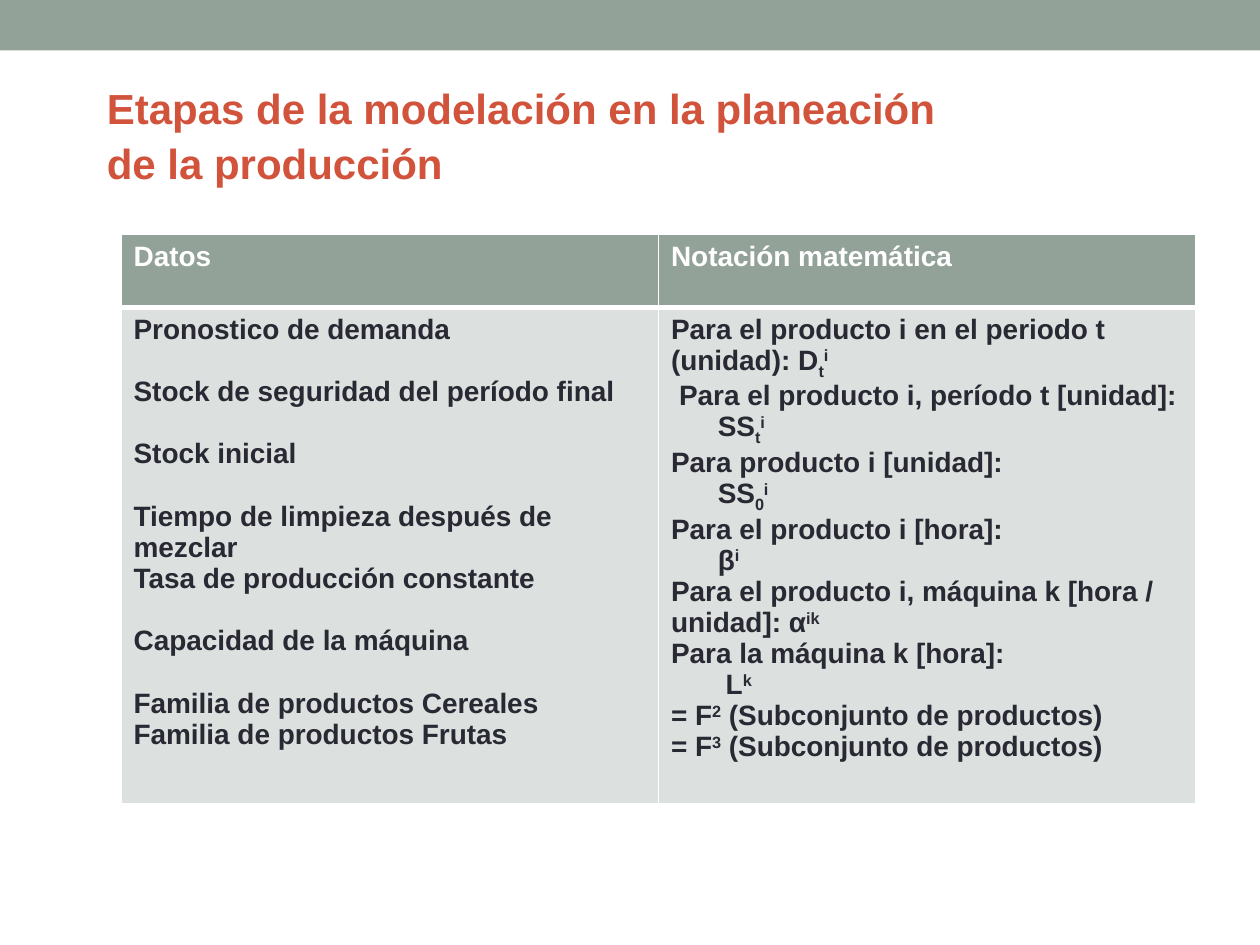
from dataclasses import dataclass

from lxml.etree import SubElement
from pptx import Presentation
from pptx.dml.color import RGBColor
from pptx.enum.shapes import MSO_SHAPE
from pptx.enum.text import MSO_ANCHOR, MSO_AUTO_SIZE, PP_ALIGN
from pptx.oxml.ns import qn
from pptx.util import Cm, Pt


@dataclass(frozen=True)
class Theme:
    font: str = "Arial"
    sage: str = "93A299"
    cell: str = "DCE0DE"
    accent: str = "D2533C"
    ink: str = "292934"
    white: str = "FFFFFF"
    title_size: float = 24
    table_size: float = 16
    line_gap: float = 17.9


THEME = Theme()
SUB, SUPER = -25, 30
NOTATION_INDENT = Cm(0.94)
SPACE_INDENT = Cm(0.16)

TITLE_LINES = ["Etapas de la modelación en la planeación", "de la producción"]
HEADINGS = ["Datos", "Notación matemática"]
# Each entry: text, whether an empty line's height precedes it
DATA = [
    ("Pronostico de demanda", False),
    ("Stock de seguridad del período final", True),
    ("Stock inicial", True),
    ("Tiempo de limpieza después de mezclar", True),
    ("Tasa de producción constante", False),
    ("Capacidad de la máquina", True),
    ("Familia de productos Cereales", True),
    ("Familia de productos Frutas", False),
]
# Each entry: left indent, then (text, baseline shift) runs
NOTATION = [
    (0, [("Para el producto i en el periodo t (unidad): D", 0), ("t", SUB), ("i", SUPER)]),
    (SPACE_INDENT, [("Para el producto i, período t [unidad]:", 0)]),
    (NOTATION_INDENT, [("SS", 0), ("t", SUB), ("i", SUPER)]),
    (0, [("Para producto i [unidad]:", 0)]),
    (NOTATION_INDENT, [("SS", 0), ("0", SUB), ("i", SUPER)]),
    (0, [("Para el producto i [hora]:", 0)]),
    (NOTATION_INDENT, [("β", 0), ("i", SUPER)]),
    (0, [("Para el producto i, máquina k [hora / unidad]: α", 0), ("ik", SUPER)]),
    (0, [("Para la máquina k [hora]:", 0)]),
    (NOTATION_INDENT + SPACE_INDENT, [("L", 0), ("k", SUPER)]),
    (0, [("= F", 0), ("2", SUPER), (" (Subconjunto de productos)", 0)]),
    (0, [("= F", 0), ("3", SUPER), (" (Subconjunto de productos)", 0)]),
]


def add_run(paragraph, text, size, color, baseline=0):
    run = paragraph.add_run()
    run.text = text
    run.font.name = THEME.font
    run.font.size = Pt(size)
    run.font.bold = True
    run.font.color.rgb = RGBColor.from_string(color)
    if baseline:
        run.font._element.set("baseline", str(baseline * 1000))


def style_cell(cell, fill, bottom_width=1):
    properties = cell._tc.get_or_add_tcPr()
    for side, width in (("L", 1), ("R", 1), ("T", 1), ("B", bottom_width)):
        line = SubElement(properties, qn(f"a:ln{side}"), w=str(Pt(width)))
        color = SubElement(line, qn("a:solidFill"))
        SubElement(color, qn("a:srgbClr"), val=THEME.white)
    cell.fill.solid()
    cell.fill.fore_color.rgb = RGBColor.from_string(fill)


def fill_cell(cell, entries, color):
    """Write (indent, space before, runs) entries as paragraphs."""
    frame = cell.text_frame
    for index, (indent, space, runs) in enumerate(entries):
        paragraph = frame.add_paragraph() if index else frame.paragraphs[0]
        paragraph.space_before = Pt(space)
        if indent:
            properties = paragraph._p.get_or_add_pPr()
            properties.set("marL", str(int(indent)))
            properties.set("indent", "0")
        for text, baseline in runs:
            add_run(paragraph, text, THEME.table_size, color, baseline)


def add_top_bar(slide, left, top, width, height):
    bar = slide.shapes.add_shape(MSO_SHAPE.RECTANGLE, left, top, width, height)
    bar.shadow.inherit = False
    bar.fill.solid()
    bar.fill.fore_color.rgb = RGBColor.from_string(THEME.sage)
    bar.line.fill.background()


def place_title(slide, left, top, width, height):
    title = slide.shapes.title
    title.left, title.top, title.width, title.height = left, top, width, height
    frame = title.text_frame
    frame.word_wrap = True
    frame.auto_size = MSO_AUTO_SIZE.SHAPE_TO_FIT_TEXT
    frame.vertical_anchor = MSO_ANCHOR.TOP
    paragraph = frame.paragraphs[0]
    paragraph.alignment = PP_ALIGN.LEFT
    paragraph.line_spacing = 1.09
    for index, text in enumerate(TITLE_LINES):
        if index:
            paragraph.add_line_break()
        add_run(paragraph, text, THEME.title_size, THEME.accent)


def add_notation_table(slide, left, top, width, height):
    table = slide.shapes.add_table(2, 2, left, top, width, height).table
    table.horz_banding = False
    header_height = Cm(1.47)
    table.rows[0].height = header_height
    table.rows[1].height = height - header_height
    bodies = [
        [(0, THEME.line_gap if gap else 0, [(text, 0)]) for text, gap in DATA],
        [(indent, 0, runs) for indent, runs in NOTATION],
    ]
    for column, (heading, body) in enumerate(zip(HEADINGS, bodies)):
        header_cell, body_cell = table.cell(0, column), table.cell(1, column)
        style_cell(header_cell, THEME.sage, bottom_width=3)
        fill_cell(header_cell, [(0, 0, [(heading, 0)])], THEME.white)
        style_cell(body_cell, THEME.cell)
        fill_cell(body_cell, body, THEME.ink)


def main():
    presentation = Presentation()
    presentation.slide_width, presentation.slide_height = Cm(25.4), Cm(19.05)
    slide = presentation.slides.add_slide(presentation.slide_layouts[5])
    add_top_bar(slide, 0, 0, presentation.slide_width, Cm(1.02))
    place_title(slide, Cm(1.9), Cm(1.45), Cm(22.2), Cm(2.31))
    add_notation_table(slide, Cm(2.44), Cm(4.73), Cm(21.67), Cm(11.38))
    presentation.save("out.pptx")


if __name__ == "__main__":
    main()
